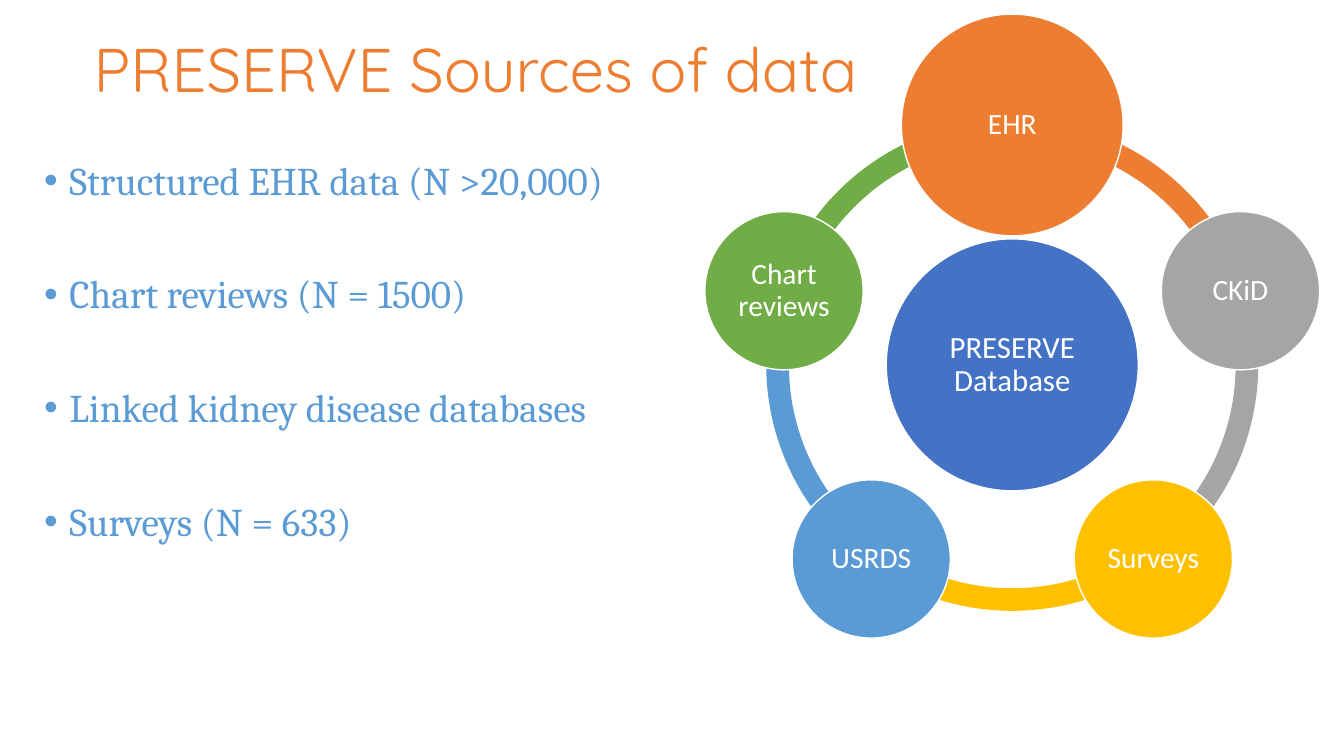
from dataclasses import dataclass
from math import cos, radians, sin

from lxml import etree
from pptx import Presentation
from pptx import util as u
from pptx.dml.color import RGBColor
from pptx.enum import shapes, text
from pptx.oxml import ns


@dataclass(frozen=True)
class Theme:
    orange: str = "ED7D31"
    gray: str = "A5A5A5"
    gold: str = "FFC000"
    sky: str = "5B9BD5"
    green: str = "70AD47"
    blue: str = "4472C4"
    white: str = "FFFFFF"
    title: int = 44
    body: int = 28
    hub: int = 22
    node: int = 21


THEME = Theme()
MID_X, MID_Y = 10.04, 3.62
ORBIT = 2.38
RING = 4.88
STEP = 72
TOP = 270

POINTS = [
    "Structured EHR data (N >20,000)",
    "Chart reviews (N = 1500)",
    "Linked kidney disease databases",
    "Surveys (N = 633)",
]
NODES = [
    ("EHR", THEME.orange, 2.2),
    ("CKiD", THEME.gray, 1.57),
    ("Surveys", THEME.gold, 1.57),
    ("USRDS", THEME.sky, 1.57),
    ("Chart reviews", THEME.green, 1.57),
]


def add_run(para, words, size, face, color):
    para.line_spacing = 0.9
    run = para.add_run()
    run.text = words
    run.font.size = u.Pt(size)
    run.font.name = face
    run.font.color.rgb = RGBColor.from_string(color)


def add_box(slide, left, top, width, height):
    box = slide.shapes.add_textbox(
        u.Inches(left), u.Inches(top), u.Inches(width), u.Inches(height))
    box.text_frame.word_wrap = True
    return box.text_frame


def add_bullet(para):
    props = para._p.get_or_add_pPr()
    props.set("marL", str(u.Inches(0.25)))
    props.set("indent", str(u.Inches(-0.25)))
    etree.SubElement(props, ns.qn("a:buFont")).set("typeface", "Arial")
    etree.SubElement(props, ns.qn("a:buChar")).set("char", "•")


def add_list(slide, points):
    frame = add_box(slide, 0.34, 1.55, 6.43, 4.7)
    for i, point in enumerate(points):
        para = frame.add_paragraph() if i else frame.paragraphs[0]
        add_bullet(para)
        if i:
            para.space_before = u.Pt(51)
        add_run(para, point, THEME.body, "Cambria", THEME.sky)


def add_round(slide, kind, x, y, size, color):
    shape = slide.shapes.add_shape(
        kind, u.Inches(x - size / 2), u.Inches(y - size / 2),
        u.Inches(size), u.Inches(size))
    shape.shadow.inherit = False
    shape.fill.solid()
    shape.fill.fore_color.rgb = RGBColor.from_string(color)
    return shape


def add_arc(slide, start, color):
    arc = add_round(slide, shapes.MSO_SHAPE.BLOCK_ARC, MID_X, MID_Y, RING, color)
    arc.line.fill.background()
    arc.adjustments[0] = start % 360 * 0.6
    arc.adjustments[1] = (start + STEP) % 360 * 0.6
    arc.adjustments[2] = 0.046


def add_disc(slide, x, y, size, color, label, points):
    disc = add_round(slide, shapes.MSO_SHAPE.OVAL, x, y, size, color)
    disc.line.color.rgb = RGBColor.from_string(THEME.white)
    disc.line.width = u.Pt(1)
    frame = disc.text_frame
    frame.word_wrap = True
    frame.vertical_anchor = text.MSO_ANCHOR.MIDDLE
    frame.margin_left = frame.margin_right = u.Inches(0.03)
    frame.margin_top = frame.margin_bottom = u.Inches(0.03)
    para = frame.paragraphs[0]
    para.alignment = text.PP_ALIGN.CENTER
    add_run(para, label, points, "Calibri", THEME.white)


def add_wheel(slide):
    for i, (label, color, size) in enumerate(NODES):
        add_arc(slide, TOP + i * STEP, color)
    add_disc(slide, MID_X, MID_Y, 2.5, THEME.blue, "PRESERVE Database", THEME.hub)
    for i, (label, color, size) in enumerate(NODES):
        turn = radians(TOP + i * STEP)
        add_disc(slide, MID_X + ORBIT * cos(turn), MID_Y + ORBIT * sin(turn),
                 size, color, label, THEME.node)


def main():
    deck = Presentation()
    deck.slide_width = u.Inches(13.33)
    deck.slide_height = u.Inches(7.5)
    slide = deck.slides.add_slide(deck.slide_layouts[6])
    title = add_box(slide, 0.83, 0.34, 11.68, 1.05)
    add_run(title.paragraphs[0], "PRESERVE Sources of data",
            THEME.title, "Quicksand", THEME.orange)
    add_list(slide, POINTS)
    add_wheel(slide)
    deck.save("out.pptx")


if __name__ == "__main__":
    main()
